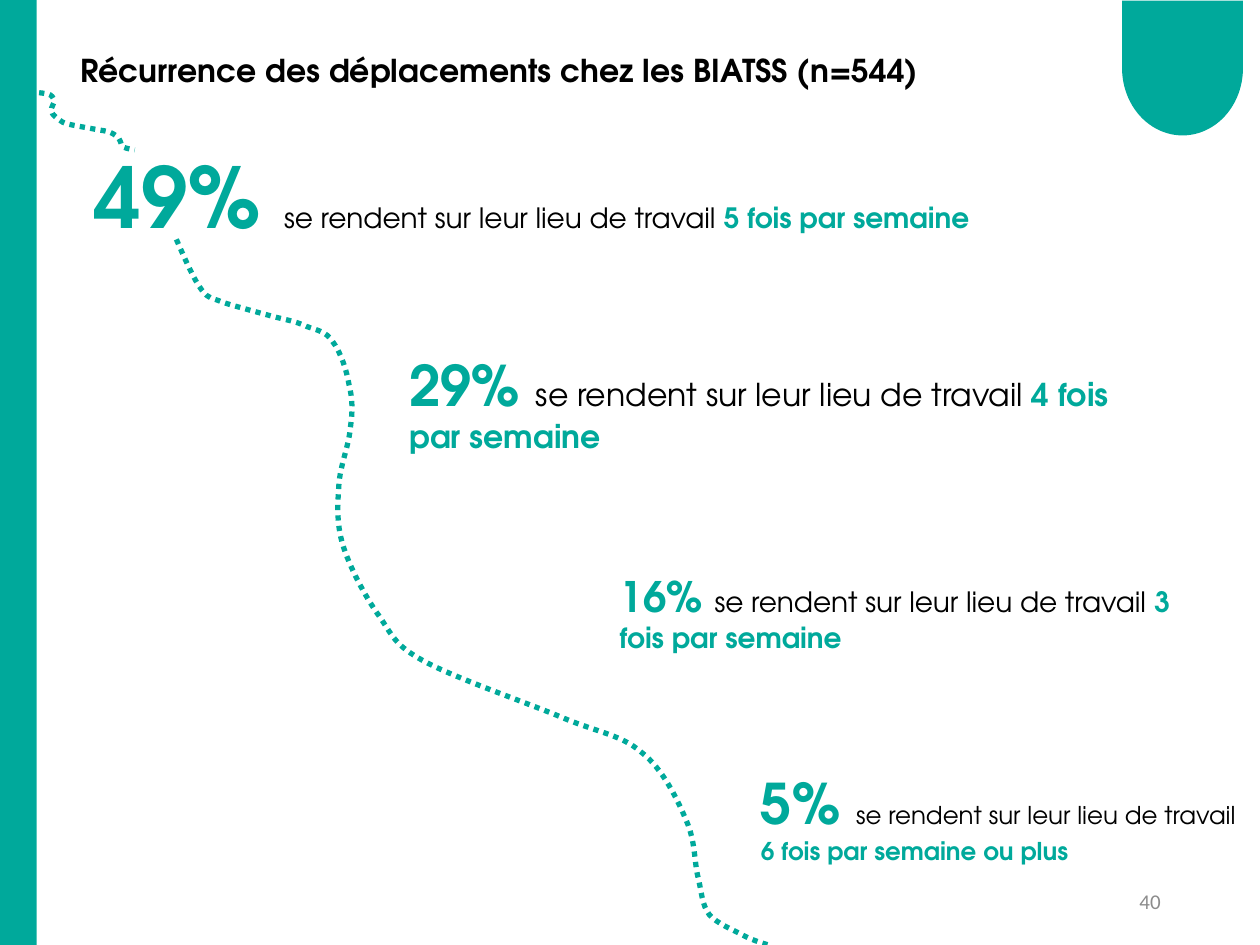
from lxml import etree
from pptx import Presentation
from pptx.dml.color import RGBColor
from pptx.enum.dml import MSO_LINE
from pptx.enum.shapes import MSO_SHAPE
from pptx.enum.text import MSO_ANCHOR, MSO_AUTO_SIZE, PP_ALIGN
from pptx.oxml.ns import qn
from pptx.util import Inches, Pt

TEAL = RGBColor(0x00, 0xA9, 0x9B)
BLACK = RGBColor(0x00, 0x00, 0x00)
GREY = RGBColor(0x8C, 0x8C, 0x8C)
MAIN_FONT = "TeX Gyre Adventor"
NUMBER_FONT = "Calibri"
RECTANGLE = MSO_SHAPE.RECTANGLE
DELAY = MSO_SHAPE.FLOWCHART_DELAY
ROUND_DOT = MSO_LINE.ROUND_DOT
MIDDLE = MSO_ANCHOR.MIDDLE
RIGHT = PP_ALIGN.RIGHT
FIT_SHAPE = MSO_AUTO_SIZE.SHAPE_TO_FIT_TEXT

TRAIL_WIDTH, TRAIL_HEIGHT = 470, 560
TRAIL_CURVES = [
    [(7, 16), (14, 32), (20, 40)],
    [(26, 48), (28, 46), (37, 50)],
    [(46, 53), (76, 61), (76, 61)],
    [(87, 64), (95, 65), (103, 69)],
    [(111, 72), (119, 73), (124, 81)],
    [(130, 89), (135, 103), (137, 115)],
    [(140, 127), (140, 137), (138, 150)],
    [(137, 164), (130, 179), (129, 195)],
    [(128, 210), (127, 225), (132, 242)],
    [(137, 259), (150, 284), (161, 299)],
    [(172, 315), (173, 322), (197, 335)],
    [(221, 348), (276, 367), (305, 379)],
    [(333, 391), (353, 393), (369, 407)],
    [(386, 420), (398, 445), (405, 462)],
    [(412, 478), (411, 494), (414, 506)],
    [(417, 518), (417, 528), (423, 536)],
    [(429, 543), (442, 548), (449, 552)],
    [(457, 556), (463, 558), (470, 560)],
]

TRAIL_BOXES = [(1.4, 1.9, 4.7, 5.6), (0.16, 0.68, 0.91, 0.51)]
STATISTICS = [
    ((0.65, 1.1, 8.86, 0.91), "49% ", 48, "5 fois par semaine", 16),
    ((3.15, 2.73, 5.76, 0.94), "29% ", 32, "4 fois par semaine", 18),
    ((4.82, 4.48, 4.96, 0.77), "16% ", 24, "3 fois par semaine", 16),
    ((5.94, 6.05, 4.01, 0.88), "5% ", 32, "6 fois par semaine ou plus", 14),
]


def add_block(slide, preset, box, rotation=0):
    shape = slide.shapes.add_shape(preset, *map(Inches, box))
    shape.rotation = rotation
    shape.shadow.inherit = False
    shape.fill.solid()
    shape.fill.fore_color.rgb = TEAL
    shape.line.fill.background()


def add_trail(slide, box):
    left, top, width, height = map(Inches, box)
    scale = (width / TRAIL_WIDTH, height / TRAIL_HEIGHT)
    builder = slide.shapes.build_freeform(0, 0, scale=scale)
    builder.add_line_segments([point for curve in TRAIL_CURVES for point in curve], close=False)
    shape = builder.convert_to_shape(left, top)
    bend_segments(shape)
    shape.shadow.inherit = False
    shape.fill.background()
    shape.line.color.rgb = TEAL
    shape.line.width = Pt(3)
    shape.line.dash_style = ROUND_DOT


def bend_segments(shape):
    segments = list(shape.element.iter(qn("a:lnTo")))
    outline = segments[0].getparent()
    for first in range(0, len(segments), 3):
        curve = etree.SubElement(outline, qn("a:cubicBezTo"))
        for segment in segments[first:first + 3]:
            curve.append(segment[0])
            outline.remove(segment)


def add_text(slide, box, pieces, font_name=MAIN_FONT):
    text_box = slide.shapes.add_textbox(*map(Inches, box))
    text_frame = text_box.text_frame
    text_frame.word_wrap = True
    paragraph = text_frame.paragraphs[0]
    for text, size, color, bold in pieces:
        run = paragraph.add_run()
        run.text = text
        run.font.name = font_name
        run.font.size = Pt(size)
        run.font.color.rgb = color
        run.font.bold = bold
    return text_frame


def add_title(slide, box):
    title = "Récurrence des déplacements chez les BIATSS (n=544)"
    add_text(slide, box, [(title, 18, BLACK, True)]).auto_size = FIT_SHAPE


def add_statistic(slide, box, share, share_size, frequency, size):
    pieces = [
        (share, share_size, TEAL, True),
        ("se rendent sur leur lieu de travail ", size, BLACK, False),
        (frequency, size, TEAL, True),
    ]
    add_text(slide, box, pieces).auto_size = FIT_SHAPE


def add_page_number(slide, box):
    text_frame = add_text(slide, box, [("40", 12, GREY, False)], NUMBER_FONT)
    text_frame.vertical_anchor = MIDDLE
    text_frame.paragraphs[0].alignment = RIGHT


def main():
    presentation = Presentation()
    presentation.slide_width = Inches(10)
    presentation.slide_height = Inches(7.5)
    slide = presentation.slides.add_slide(presentation.slide_layouts[6])
    add_block(slide, RECTANGLE, (0, 0, 0.29, 7.5))
    add_title(slide, (0.54, 0.36, 9.24, 0.4))
    for statistic in STATISTICS:
        add_statistic(slide, *statistic)
    for box in TRAIL_BOXES:
        add_trail(slide, box)
    add_block(slide, DELAY, (8.85, 0.06, 1.07, 0.96), rotation=90)
    add_page_number(slide, (7.06, 6.95, 2.25, 0.4))
    presentation.save("out.pptx")


if __name__ == "__main__":
    main()
